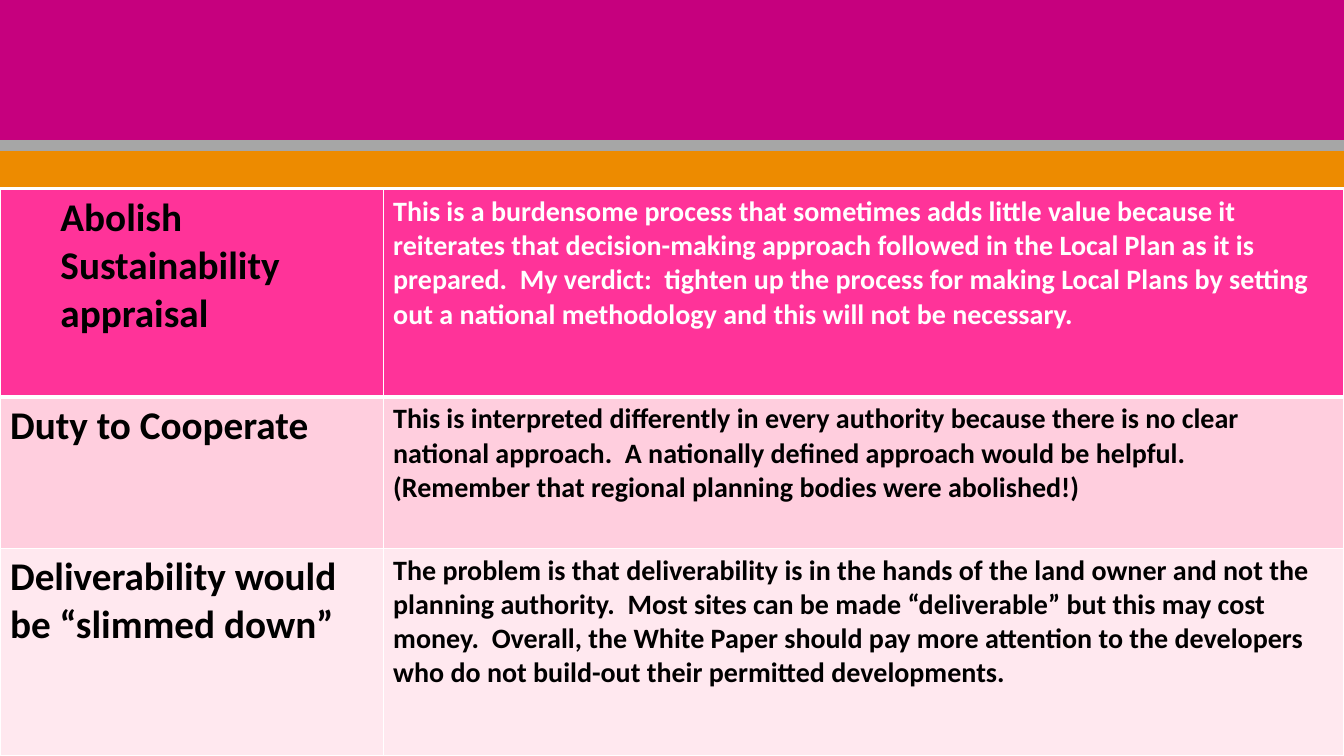
from dataclasses import dataclass

from lxml.etree import SubElement as add_child
from pptx import Presentation
from pptx.dml.color import RGBColor as Color
from pptx.oxml.ns import qn
from pptx.slide import Slide
from pptx.table import Table, _Cell as Cell
from pptx.util import Inches, Pt

PAGE_WIDTH, PAGE_HEIGHT = 13.33, 7.5
BAND_HEIGHTS = {"C6007E": 1.39, "A6A6A6": 0.11, "ED8B00": 0.36}
TOPIC_COLUMNS = [3.8, 9.53]
TOPICS_TOP = 1.88
THIN, THICK = 1, 3
NO_MARGINS = dict.fromkeys(["margin_left", "margin_right", "margin_top", "margin_bottom"], 0)
TOPIC_FORMAT = {"name": "Calibri", "size": Pt(28), "bold": True}
VERDICT_FORMAT = {"name": "Calibri", "size": Pt(20), "bold": True}


@dataclass
class Topic:
    name: str
    verdict: str
    height: float
    fill: str
    verdict_color: str = "000000"
    top_line: int = THIN
    bottom_line: int = THIN
    indent: float = 0


TOPICS = [
    Topic(
        "Abolish Sustainability appraisal",
        "This is a burdensome process that sometimes adds little value because it "
        "reiterates that decision-making approach followed in the Local Plan as it is "
        "prepared.  My verdict:  tighten up the process for making Local Plans by setting "
        "out a national methodology and this will not be necessary.",
        2.06, "FF3399", verdict_color="FFFFFF", bottom_line=THICK, indent=0.5,
    ),
    Topic(
        "Duty to Cooperate",
        "This is interpreted differently in every authority because there is no clear "
        "national approach.  A nationally defined approach would be helpful.  "
        "(Remember that regional planning bodies were abolished!)",
        1.5, "FFCEDE", top_line=THICK,
    ),
    Topic(
        "Deliverability would be “slimmed down”",
        "The problem is that deliverability is in the hands of the land owner and not the "
        "planning authority.  Most sites can be made “deliverable” but this may cost "
        "money.  Overall, the White Paper should pay more attention to the developers "
        "who do not build-out their permitted developments.",
        2.06, "FFE8EF",
    ),
]


def color(value: str) -> Color:
    return Color.from_string(value)


def set_values(target: object, values: dict) -> None:
    for name, value in values.items():
        setattr(target, name, value)


def add_grid(page: Slide, top: float, columns: list[float], rows: list[float]) -> Table:
    frame = page.shapes.add_table(
        len(rows), len(columns), 0, Inches(top), Inches(sum(columns)), Inches(sum(rows))
    )
    table = frame.table
    set_values(table, {"first_row": False, "horz_banding": False})
    for column, width in zip(table.columns, columns):
        column.width = Inches(width)
    for row, height in zip(table.rows, rows):
        row.height = Inches(height)
    return table


def paint_cell(cell: Cell, fill: str, top_line: int = 0, bottom_line: int = 0) -> None:
    side_line = THIN if top_line else 0
    widths = {"lnL": side_line, "lnR": side_line, "lnT": top_line, "lnB": bottom_line}
    properties = cell._tc.get_or_add_tcPr()
    for side, width in widths.items():
        line = add_child(properties, qn(f"a:{side}"), w=str(Pt(width)))
        if width:
            paint = add_child(line, qn("a:solidFill"))
            add_child(paint, qn("a:srgbClr"), val="FFFFFF")
        else:
            add_child(line, qn("a:noFill"))
    cell.fill.solid()
    cell.fill.fore_color.rgb = color(fill)


def write_cell(cell: Cell, text: str, text_color: str, text_format: dict) -> None:
    span = cell.text_frame.paragraphs[0].add_run()
    span.text = text
    set_values(span.font, text_format)
    span.font.color.rgb = color(text_color)


def add_bands(page: Slide) -> None:
    table = add_grid(page, 0, [PAGE_WIDTH], list(BAND_HEIGHTS.values()))
    for cell, fill in zip(table.iter_cells(), BAND_HEIGHTS):
        set_values(cell, NO_MARGINS)
        para = cell.text_frame.paragraphs[0]
        add_child(para._p, qn("a:endParaRPr"), sz="100")
        paint_cell(cell, fill)


def add_topics(page: Slide) -> None:
    table = add_grid(page, TOPICS_TOP, TOPIC_COLUMNS, [topic.height for topic in TOPICS])
    for row, topic in zip(table.rows, TOPICS):
        name_cell, verdict_cell = row.cells
        for cell in (name_cell, verdict_cell):
            paint_cell(cell, topic.fill, topic.top_line, topic.bottom_line)
        write_cell(name_cell, topic.name, "000000", TOPIC_FORMAT)
        write_cell(verdict_cell, topic.verdict, topic.verdict_color, VERDICT_FORMAT)
        if topic.indent:
            para = name_cell.text_frame.paragraphs[0]
            para.level = 1
            para._p.get_or_add_pPr().set("marL", str(Inches(topic.indent)))


def main() -> None:
    deck = Presentation()
    set_values(deck, {"slide_width": Inches(PAGE_WIDTH), "slide_height": Inches(PAGE_HEIGHT)})
    page = deck.slides.add_slide(deck.slide_layouts[6])
    add_bands(page)
    add_topics(page)
    deck.save("out.pptx")


if __name__ == "__main__":
    main()
